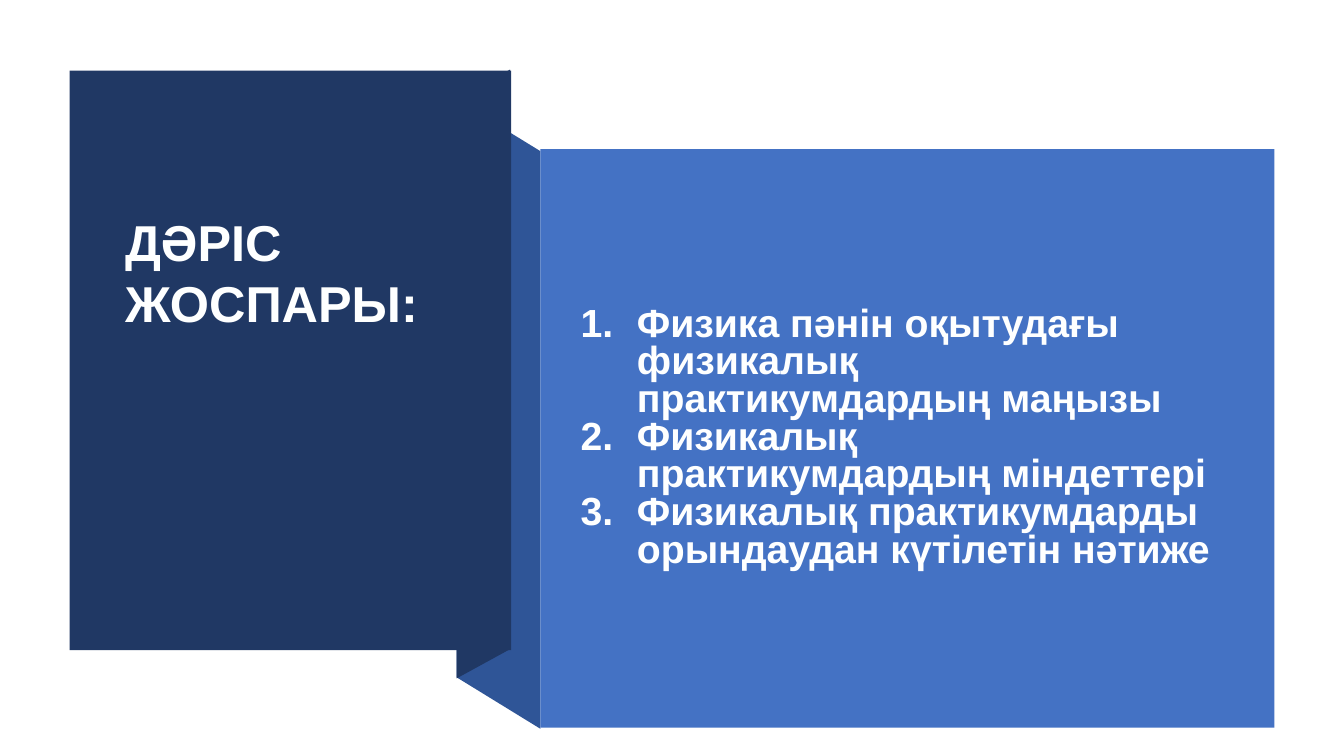
"""Build the lecture plan slide with a folded ribbon panel."""
from lxml.etree import SubElement
from pptx import Presentation
from pptx.dml.color import RGBColor
from pptx.enum.shapes import MSO_SHAPE
from pptx.enum.text import MSO_ANCHOR, PP_ALIGN
from pptx.oxml.ns import qn
from pptx.util import Inches, Pt

TITLE = "ДӘРІС ЖОСПАРЫ:"
ITEMS = [
    "Физика пәнін оқытудағы физикалық практикумдардың маңызы",
    "Физикалық практикумдардың міндеттері",
    "Физикалық практикумдарды орындаудан күтілетін нәтиже",
]
COLORS = {"navy": "203864", "fold": "2F5597", "blue": "4472C4", "text": "FEFFFF"}
FOLDS = [
    ("fold", [(5.36, 7.23), (4.53, 6.72), (4.53, 0.99), (5.36, 1.5)]),
    ("navy", [(5.06, 6.44), (4.53, 6.73), (4.53, 0.98), (5.06, 0.69)]),
]
PANELS = [
    ("navy", (0.69, 0.7, 4.38, 5.75)),
    ("blue", (5.36, 1.48, 7.28, 5.74)),
]
TITLE_BOX = (1.14, 2.04, 4.04, 1.31)
LIST_BOX = (5.66, 2.92, 6.5, 2.87)
INDENT = Inches(0.56)
FONT = {"name": "Arial", "bold": True}
FRAME = {"word_wrap": True, "vertical_anchor": MSO_ANCHOR.MIDDLE}
PARA = {"alignment": PP_ALIGN.LEFT, "space_before": Pt(0), "space_after": Pt(0)}


def assign(target, values):
    for name, value in values.items():
        setattr(target, name, value)


def paint(shape, color):
    shape.shadow.inherit = False
    shape.fill.solid()
    shape.fill.fore_color.rgb = RGBColor.from_string(COLORS[color])
    shape.line.fill.background()


def write(frame, lines, size, spacing):
    assign(frame, FRAME)
    frame.text = "\n".join(lines)
    for para in frame.paragraphs:
        assign(para, {**PARA, "line_spacing": spacing})
        font = para.runs[0].font
        assign(font, {**FONT, "size": Pt(size)})
        font.color.rgb = RGBColor.from_string(COLORS["text"])


def number(para):
    props = para._p.get_or_add_pPr()
    props.set("marL", str(INDENT))
    props.set("indent", str(-INDENT))
    SubElement(props, qn("a:buFont"), typeface="+mj-lt")
    SubElement(props, qn("a:buAutoNum"), type="arabicPeriod")


def main():
    deck = Presentation()
    deck.slide_width, deck.slide_height = Inches(13.33), Inches(7.5)
    slide = deck.slides.add_slide(deck.slide_layouts[5])
    shapes = slide.shapes

    for color, points in FOLDS:
        start, *rest = [(Inches(x), Inches(y)) for x, y in points]
        outline = shapes.build_freeform(*start)
        outline.add_line_segments(rest, close=True)
        paint(outline.convert_to_shape(), color)
    for color, box in PANELS:
        paint(shapes.add_shape(MSO_SHAPE.RECTANGLE, *map(Inches, box)), color)

    plan = shapes.add_textbox(*map(Inches, LIST_BOX)).text_frame
    write(plan, ITEMS, 28, 0.8)
    for para in plan.paragraphs:
        number(para)

    title = shapes.title
    sides = ("left", "top", "width", "height")
    assign(title, dict(zip(sides, map(Inches, TITLE_BOX))))
    write(title.text_frame, [TITLE], 36, 1.0)
    title.element.getparent().append(title.element)
    deck.save("out.pptx")


if __name__ == "__main__":
    main()
